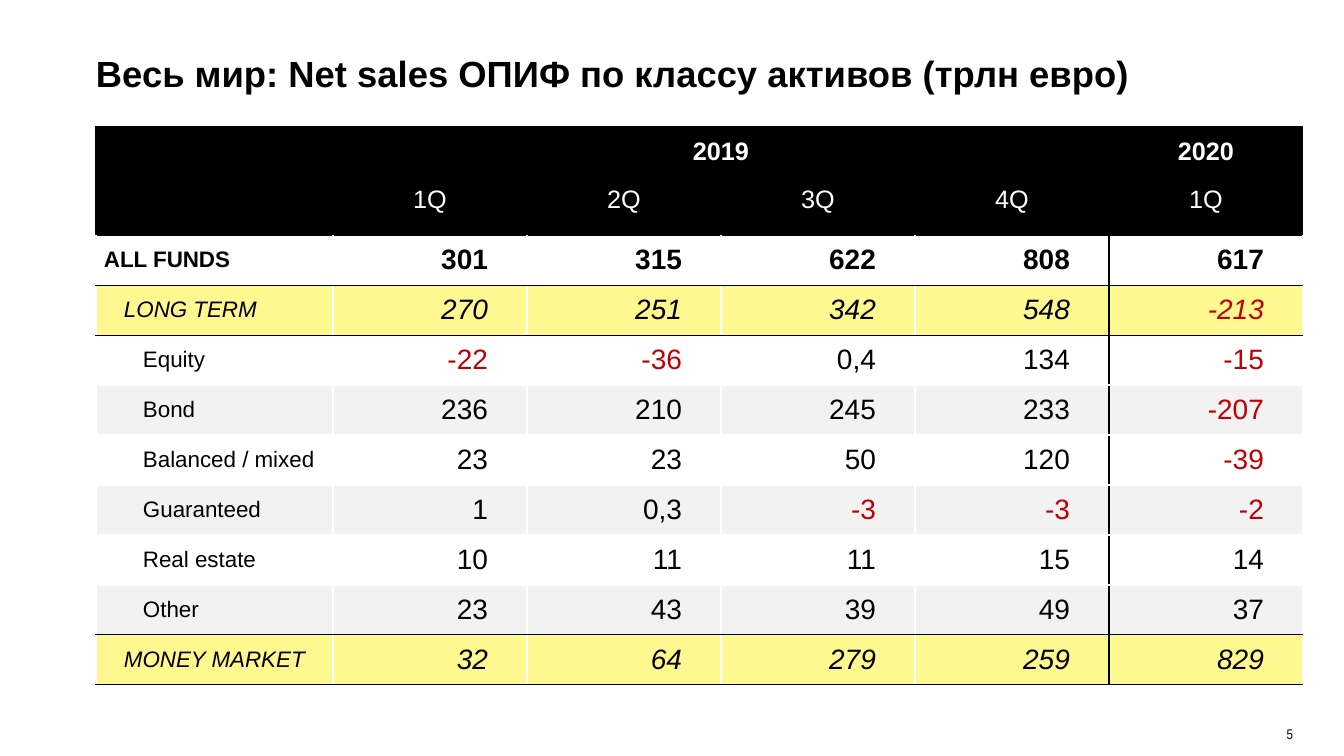
from lxml import etree
from pptx import Presentation
from pptx.dml.color import RGBColor
from pptx.enum.text import MSO_ANCHOR, PP_ALIGN
from pptx.oxml.ns import qn
from pptx.util import Pt

LEFT, CENTER, RIGHT = PP_ALIGN.LEFT, PP_ALIGN.CENTER, PP_ALIGN.RIGHT
MIDDLE = MSO_ANCHOR.MIDDLE

TITLE = "Весь мир: Net sales ОПИФ по классу активов (трлн евро)"
PAGE_NUMBER = "5"
YEARS = ["", "2019", "", "", "", "2020"]
QUARTERS = ["", "1Q", "2Q", "3Q", "4Q", "1Q"]
FUNDS = [
    ("ALL FUNDS", "total", ["301", "315", "622", "808", "617"]),
    ("LONG TERM", "group", ["270", "251", "342", "548", "-213"]),
    ("Equity", "class", ["-22", "-36", "0,4", "134", "-15"]),
    ("Bond", "class", ["236", "210", "245", "233", "-207"]),
    ("Balanced / mixed", "class", ["23", "23", "50", "120", "-39"]),
    ("Guaranteed", "class", ["1", "0,3", "-3", "-3", "-2"]),
    ("Real estate", "class", ["10", "11", "11", "15", "14"]),
    ("Other", "class", ["23", "43", "39", "49", "37"]),
    ("MONEY MARKET", "group", ["32", "64", "279", "259", "829"]),
]
INDENTS = {"total": 8, "group": 28, "class": 47}
BLACK, WHITE, RED = "000000", "FFFFFF", "C00000"
YELLOW, GREY = "FFF78F", "F2F2F2"

SLIDE_W, SLIDE_H = 1344, 756
TABLE_LEFT, TABLE_TOP, TABLE_W = 96, 127, 1207
LABEL_W, QUARTER_W = 237, 194
ROW_H, QUARTER_ROW_H = 50, 57
LAST_2019 = 4


def px(length):
    return round(length * 914400 / 100.8)


def color(value):
    return RGBColor.from_string(value)


def put_text(frame, text, size=18, font="Arial", ink=BLACK, align=LEFT,
             bold=False, italic=False, spacing=None):
    paragraph = frame.paragraphs[0]
    paragraph.alignment = align
    paragraph.line_spacing = spacing
    run = paragraph.add_run()
    run.text = text
    run.font.size = Pt(size)
    run.font.name = font
    run.font.bold = bold
    run.font.italic = italic
    run.font.color.rgb = color(ink)


def set_margins(target, left, top, right, bottom):
    target.margin_left, target.margin_top = px(left), px(top)
    target.margin_right, target.margin_bottom = px(right), px(bottom)
    target.vertical_anchor = MIDDLE


def add_label(area, margins, text, **style):
    frame = slide.shapes.add_textbox(*map(px, area)).text_frame
    frame.word_wrap = True
    set_margins(frame, *margins)
    put_text(frame, text, **style)


def set_cell(cell, fill, edges, margins):
    properties = cell._tc.get_or_add_tcPr()
    for side, ink in zip("LRTB", edges):
        line = etree.SubElement(properties, qn(f"a:ln{side}"), w=str(Pt(1)))
        solid = etree.SubElement(line, qn("a:solidFill"))
        etree.SubElement(solid, qn("a:srgbClr"), val=ink)
    cell.fill.solid()
    cell.fill.fore_color.rgb = color(fill)
    set_margins(cell, *margins)


def row_line(index):
    touching = FUNDS[max(index - 1, 0):index + 1]
    ruled = index == 0 or any(kind == "group" for _, kind, _ in touching)
    return BLACK if ruled else WHITE


prs = Presentation()
prs.slide_width, prs.slide_height = px(SLIDE_W), px(SLIDE_H)
slide = prs.slides.add_slide(prs.slide_layouts[6])

add_label((TABLE_LEFT, 56, TABLE_W, 39), (0, 8, 12, 8), TITLE,
          size=26, bold=True, spacing=0.9)
add_label((1218, 725, 85, 17), (10, 5, 10, 5), PAGE_NUMBER,
          size=10, font="Arial Narrow", align=RIGHT)

row_heights = [ROW_H, QUARTER_ROW_H] + [ROW_H] * len(FUNDS)
column_widths = [LABEL_W] + [QUARTER_W] * (len(QUARTERS) - 1)
table = slide.shapes.add_table(
    len(row_heights), len(column_widths), px(TABLE_LEFT), px(TABLE_TOP),
    px(TABLE_W), px(sum(row_heights))).table
table.first_row = table.horz_banding = False
for row, height in zip(table.rows, row_heights):
    row.height = px(height)
for column, width in zip(table.columns, column_widths):
    column.width = px(width)

for r, (headings, bottom) in enumerate([(YEARS, 8), (QUARTERS, 20)]):
    for c, heading in enumerate(headings):
        cell = table.cell(r, c)
        set_cell(cell, BLACK, [BLACK] * 4, (8, 8, 8, bottom))
        if heading:
            put_text(cell.text_frame, heading, ink=WHITE, align=CENTER,
                     bold=headings is YEARS)
table.cell(0, 1).merge(table.cell(0, LAST_2019))

for r, (fund, kind, sales) in enumerate(FUNDS):
    striped = GREY if r % 2 else WHITE
    fill = YELLOW if kind == "group" else striped
    for c, text in enumerate([fund] + sales):
        cell = table.cell(r + 2, c)
        edges = (BLACK if c == LAST_2019 + 1 else WHITE,
                 BLACK if c == LAST_2019 else WHITE,
                 row_line(r), row_line(r + 1))
        margins = (16, 8, 39, 8) if c else (INDENTS[kind], 8, 8, 8)
        set_cell(cell, fill, edges, margins)
        put_text(cell.text_frame, text, size=20 if c else 16,
                 ink=RED if text.startswith("-") else BLACK,
                 align=RIGHT if c else LEFT,
                 bold=kind == "total", italic=kind == "group")

prs.save("out.pptx")
